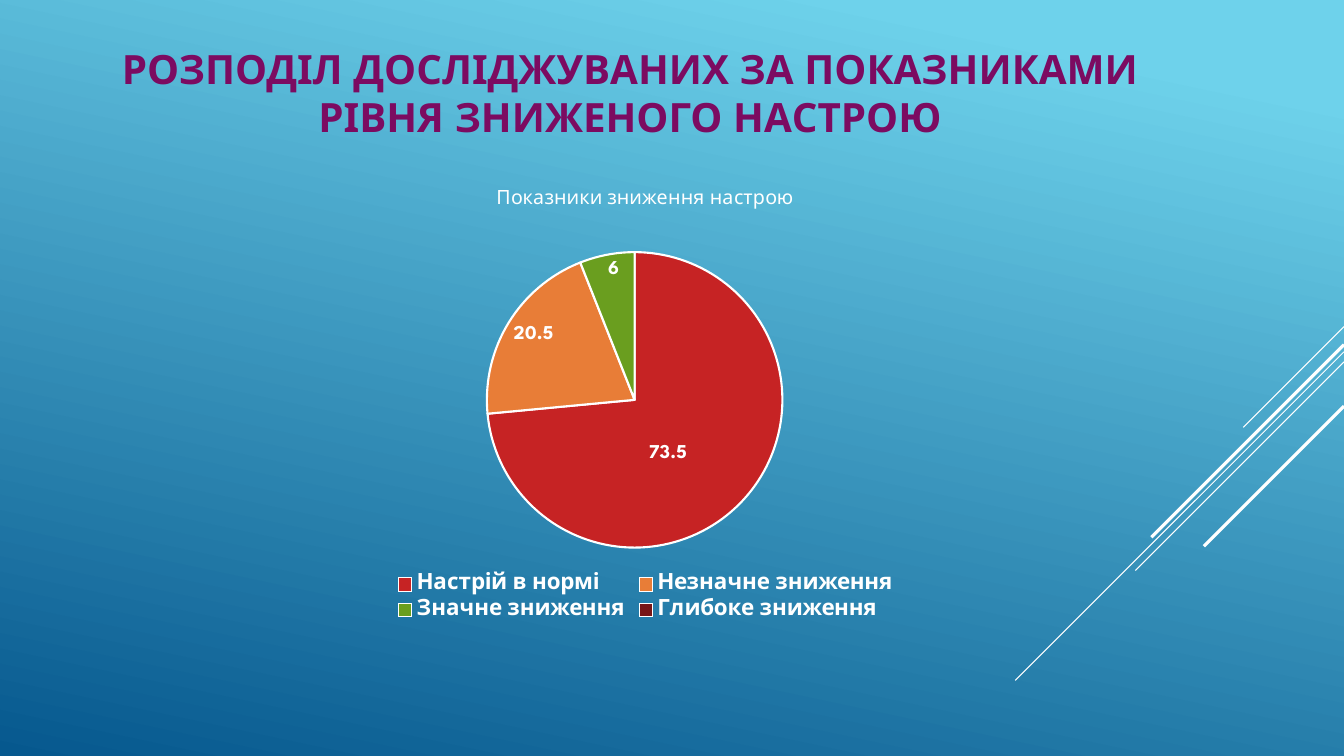
import pptx
import pptx.chart.data
import pptx.dml.color
import pptx.enum.chart
import pptx.enum.shapes
import pptx.enum.text
import pptx.oxml
import pptx.oxml.ns
import pptx.util
from pptx.util import Inches

RGBColor = pptx.dml.color.RGBColor
WHITE = RGBColor(0xFF, 0xFF, 0xFF)
PURPLE = RGBColor(0x7C, 0x0B, 0x61)
SKY = RGBColor(0x6E, 0xD2, 0xEB)
DEEP_BLUE = RGBColor(0x06, 0x58, 0x8E)
RED = RGBColor(0xC6, 0x23, 0x24)
ORANGE = RGBColor(0xE8, 0x7D, 0x37)
GREEN = RGBColor(0x6A, 0x9E, 0x1F)
MAROON = RGBColor(0x77, 0x15, 0x16)
FONT = "League Spartan"


def write(frame, text, **look):
    frame.text = text
    paragraph = frame.paragraphs[0]
    paragraph.alignment = pptx.enum.text.PP_ALIGN.CENTER
    paragraph.line_spacing = 1.0
    style(paragraph.runs[0].font, **look)


def style(font, size, color=WHITE, bold=False):
    font.name = FONT
    font.size = pptx.util.Pt(size)
    font.bold = bold
    font.color.rgb = color


deck = pptx.Presentation()
deck.slide_width = Inches(13.33)
deck.slide_height = Inches(7.5)
slide = deck.slides.add_slide(deck.slide_layouts[5])

# Background gradient
backdrop = slide.background.fill
backdrop.gradient()
backdrop.gradient_angle = 258
for stop, (position, color) in zip(backdrop.gradient_stops,
                                   [(0.1, SKY), (1, DEEP_BLUE)]):
    stop.position = position
    stop.color.rgb = color

# Diagonal lines at 45 degrees from the right edge: start height, run, weight
for top, run, weight in [(3.24, 1, 0.75), (3.49, 3.26, 0.75), (3.59, 2.07, 0.75),
                         (3.42, 1.91, 2.25), (4.03, 1.39, 2.25)]:
    diagonal = slide.shapes.add_connector(
        pptx.enum.shapes.MSO_CONNECTOR.STRAIGHT,
        Inches(13.33), Inches(top), Inches(13.33 - run), Inches(top + run))
    diagonal.line.color.rgb = WHITE
    diagonal.line.width = pptx.util.Pt(weight)
    diagonal._element.spPr.append(pptx.oxml.parse_xml(
        f'<a:effectLst {pptx.oxml.ns.nsdecls("a")}/>'))

# Title
heading = slide.shapes.title
heading.left, heading.top = Inches(0.75), Inches(0.55)
heading.width, heading.height = Inches(11), Inches(0.73)
heading.text_frame.word_wrap = True
heading.text_frame.auto_size = pptx.enum.text.MSO_AUTO_SIZE.NONE
heading.text_frame.vertical_anchor = pptx.enum.text.MSO_ANCHOR.MIDDLE
write(heading.text_frame,
      "РОЗПОДІЛ ДОСЛІДЖУВАНИХ ЗА ПОКАЗНИКАМИ РІВНЯ ЗНИЖЕНОГО НАСТРОЮ",
      size=28.8, color=PURPLE, bold=True)

# Mood pie chart
mood_data = pptx.chart.data.CategoryChartData()
mood_data.categories = ["Настрій в нормі", "Незначне зниження",
                        "Значне зниження", "Глибоке зниження"]
mood_data.add_series("Series 1", [73.5, 20.5, 6, 0])
mood = slide.shapes.add_chart(
    pptx.enum.chart.XL_CHART_TYPE.PIE, Inches(1.14), Inches(1.69),
    Inches(10.52), Inches(4.51), mood_data).chart
style(mood.font, 10)
mood.has_title = True
write(mood.chart_title.text_frame, "Показники зниження настрою", size=14)
mood.chart_title.include_in_layout = False

mood.has_legend = True
mood.legend.position = pptx.enum.chart.XL_LEGEND_POSITION.BOTTOM
mood.legend.include_in_layout = False
style(mood.legend.font, 16, bold=True)

# Slices
mood.plots[0].vary_by_categories = True
levels = mood.plots[0].series[0]
for index, color in enumerate([RED, ORANGE, GREEN, MAROON]):
    piece = levels.points[index]
    piece.format.fill.solid()
    piece.format.fill.fore_color.rgb = color
    piece.format.line.color.rgb = WHITE
    piece.format.line.width = pptx.util.Pt(1.5)

# Values on the slices, none for zero
values = levels.data_labels
values.show_value = True
values.show_percentage = False
values.show_leader_lines = False
values.position = pptx.enum.chart.XL_LABEL_POSITION.INSIDE_END
values.number_format = "General;;"
values.number_format_is_linked = False
style(values.font, 14, bold=True)
normal_value = levels.points[0].data_label
style(normal_value.font, 14, bold=True)
normal_value.position = pptx.enum.chart.XL_LABEL_POSITION.CENTER


def manual_layout(**fractions):
    places = "".join(f'<c:{key} val="{value}"/>' for key, value in fractions.items())
    return pptx.oxml.parse_xml(
        f'<c:layout {pptx.oxml.ns.nsdecls("c")}>'
        f'<c:manualLayout>{places}</c:manualLayout></c:layout>')


# Place of the pie and shift of its largest value, as fractions of the chart
plot_area = mood._chartSpace.chart.plotArea
for layout in plot_area.findall(pptx.oxml.ns.qn("c:layout")):
    plot_area.remove(layout)
plot_area.insert(0, manual_layout(layoutTarget="inner", xMode="edge", yMode="edge",
                                  x=0.35, y=0.18, w=0.28, h=0.65))
normal_value._get_or_add_dLbl().insert(1, manual_layout(x=-0.02, y=0.01))

deck.save("out.pptx")
